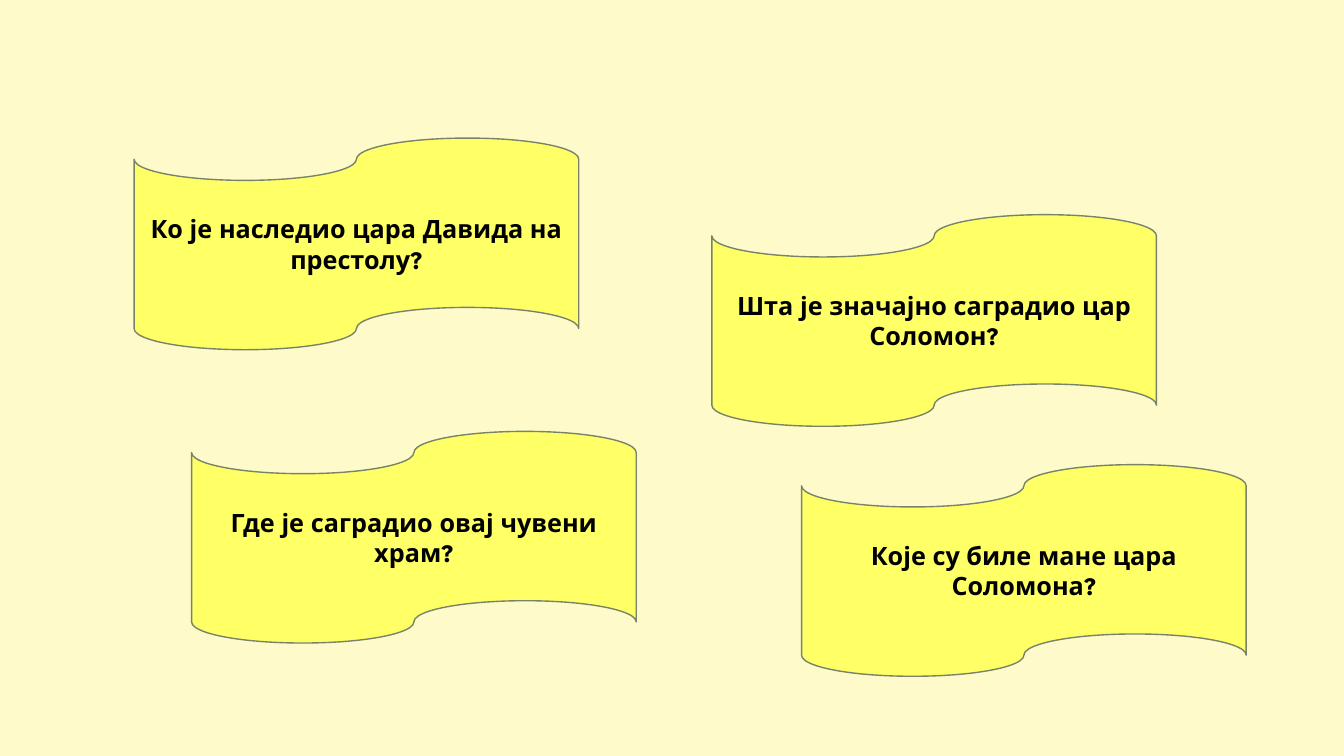
from dataclasses import dataclass

from pptx import Presentation
from pptx.dml.color import RGBColor
from pptx.enum.shapes import MSO_SHAPE
from pptx.enum.text import MSO_ANCHOR as Anchor, PP_ALIGN as Align
from pptx.slide import Slide
from pptx.util import Emu, Pt

EMU_PER_PX = 9144  # 100 px to the inch


@dataclass(frozen=True)
class Theme:
    background: RGBColor = RGBColor.from_string("FEFAC9")
    banner: RGBColor = RGBColor.from_string("FFFF66")
    outline: RGBColor = RGBColor.from_string("78846A")
    ink: RGBColor = RGBColor.from_string("000000")
    font: str = "League Spartan"
    text_size: Pt = Pt(18)
    line_width: Pt = Pt(1)


@dataclass(frozen=True)
class Question:
    left: int
    top: int
    text: str


THEME = Theme()
SLIDE_WIDTH, SLIDE_HEIGHT = 1333, 750
BANNER_WIDTH, BANNER_HEIGHT = 441, 210

QUESTIONS = (
    Question(133, 137, "Ко је наследио цара Давида на престолу?"),
    Question(795, 461, "Које су биле мане цара Соломона?"),
    Question(190, 428, "Где је саградио овај чувени храм?"),
    Question(706, 213, "Шта је значајно саградио цар Соломон?"),
)


def px(length: int) -> Emu:
    return Emu(length * EMU_PER_PX)


def draw_question(page: Slide, question: Question) -> None:
    # Wavy banner
    banner = page.shapes.add_shape(
        MSO_SHAPE.FLOWCHART_PUNCHED_TAPE,
        px(question.left), px(question.top), px(BANNER_WIDTH), px(BANNER_HEIGHT),
    )
    banner.shadow.inherit = False
    banner.fill.solid()
    banner.fill.fore_color.rgb = THEME.banner
    banner.line.color.rgb = THEME.outline
    banner.line.width = THEME.line_width

    # Centred question
    frame = banner.text_frame
    frame.word_wrap = True
    frame.vertical_anchor = Anchor.MIDDLE
    para = frame.paragraphs[0]
    para.text = question.text
    para.alignment = Align.CENTER
    para.font.name = THEME.font
    para.font.size = THEME.text_size
    para.font.bold = True
    para.font.color.rgb = THEME.ink


def main() -> None:
    # Blank page with a plain background
    deck = Presentation()
    deck.slide_width, deck.slide_height = px(SLIDE_WIDTH), px(SLIDE_HEIGHT)
    page = deck.slides.add_slide(deck.slide_layouts[6])
    page.background.fill.solid()
    page.background.fill.fore_color.rgb = THEME.background

    # Question banners
    for question in QUESTIONS:
        draw_question(page, question)

    deck.save("out.pptx")


if __name__ == "__main__":
    main()
